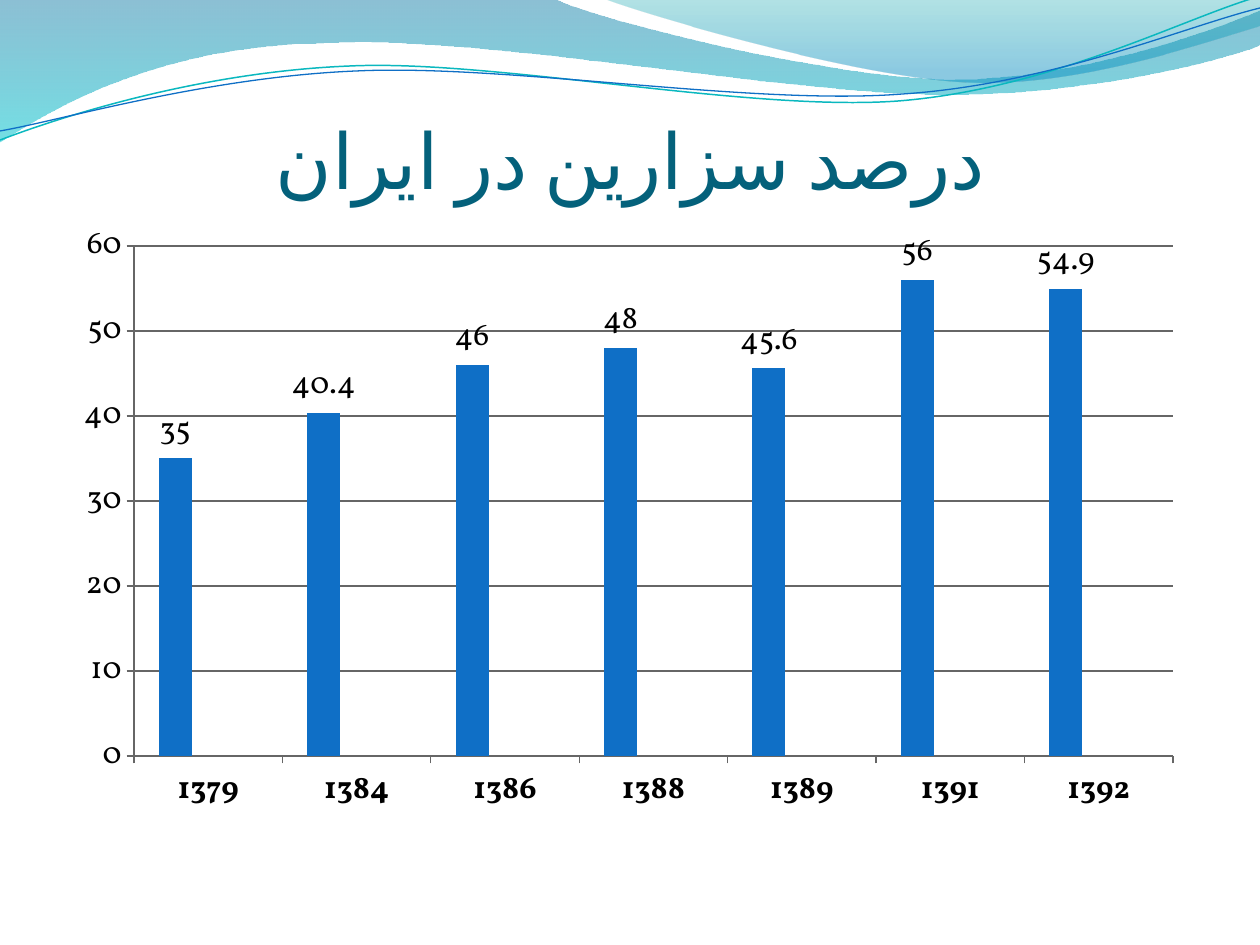
from dataclasses import dataclass

from lxml import etree
from pptx import Presentation
from pptx.chart.data import CategoryChartData
from pptx.dml.color import RGBColor
from pptx.enum.chart import XL_CHART_TYPE, XL_LABEL_POSITION, XL_TICK_MARK
from pptx.enum.text import MSO_ANCHOR, PP_ALIGN
from pptx.oxml import parse_xml
from pptx.oxml.ns import nsdecls, qn
from pptx.util import Emu, Pt

COLUMNS = XL_CHART_TYPE.COLUMN_CLUSTERED
OUTSIDE_END = XL_LABEL_POSITION.OUTSIDE_END
TICK_OUTSIDE = XL_TICK_MARK.OUTSIDE
BOTTOM = MSO_ANCHOR.BOTTOM
CENTER = PP_ALIGN.CENTER
PX = 914400 // 126


@dataclass(frozen=True)
class Theme:
    title: str = "04617B"
    ink: str = "000000"
    grid: str = "666666"
    blue: str = "0F6FC6"
    sky: str = "009DD9"
    cyan: str = "0BD0D9"
    teal_line: str = "0AB8BF"
    title_font: str = "Calibri"
    chart_font: str = "Vollkorn"
    title_size: int = 44
    chart_size: int = 18


THEME = Theme()
SLIDE_SIZE = (1260, 945)

TITLE = "درصد سزارین در ایران"
TITLE_BOX = (95, 84, 1071, 121)

CHART_BOX = (62, 212, 1134, 614)
PLOT_BOX = (134, 246, 1039, 510)
YEARS = ["1379", "1384", "1386", "1388", "1389", "1391", "1392"]
PERCENTAGES = [35, 40.4, 46, 48, 45.6, 56, 54.9]
SERIES = [
    ("Series 1", PERCENTAGES, THEME.blue),
    ("Series 2", [None] * len(YEARS), THEME.sky),
    ("Series 3", [None] * len(YEARS), THEME.cyan),
]

BANDS = [
    ((0, 0), [
        [(554, -1)],
        [(600, 21), (837, 79), (955, 79)],
        [(1075, 79), (1207, 33), (1260, 11)],
        [(1261, 45)],
        [(1239, 55), (1096, 96), (940, 94)],
        [(784, 94), (481, 35), (324, 43)],
        [(163, 45), (58, 105), (-1, 142)],
        [(0, 0)],
    ], [(0, "0074A1", 45), (1, "00C6CF", 55)]),
    ((604, -1), [
        [(641, 14), (859, 78), (969, 82)],
        [(1079, 87), (1211, 40), (1260, 26)],
        [(1260, 0)],
        [(604, -1)],
    ], [(0, "00A1A9", 30), (0.8, "008BBF", 45)]),
]
WAVES = [
    ((0, 140), [
        [(60, 117), (199, 72), (349, 66)],
        [(493, 59), (747, 112), (898, 101)],
        [(1050, 89), (1182, 19), (1257, -3)],
    ], THEME.teal_line, 0.85),
    ((0, 131), [
        [(59, 121), (207, 77), (357, 71)],
        [(508, 64), (752, 106), (903, 94)],
        [(1053, 84), (1186, 26), (1260, 8)],
    ], THEME.blue, 0.75),
]


def rgb(value):
    return RGBColor.from_string(value)


def emu(box):
    return [Emu(length * PX) for length in box]


def add_outline(slide, start, segments, close):
    builder = slide.shapes.build_freeform(*start, scale=PX)
    builder = slide.shapes.build_freeform(*emu(start))
    points = [emu(point) for segment in segments for point in segment]
    builder.add_line_segments(points, close=close)
    outline = builder.convert_to_shape()
    outline.shadow.inherit = False

    steps = iter(list(outline.element.iter(qn("a:lnTo"))))
    for segment in segments:
        first, *others = [next(steps) for _ in segment]
        if others:
            first.tag = qn("a:cubicBezTo")
            for other in others:
                first.append(other[0])
                other.getparent().remove(other)
    return outline


def add_band(slide, start, segments, stops):
    band = add_outline(slide, start, segments, True)
    band.line.fill.background()
    band.fill.gradient()
    band.fill.gradient_angle = 270
    for stop, (position, color, _) in zip(band.fill.gradient_stops, stops):
        stop.position = position
        stop.color.rgb = rgb(color)
    for color_node, (_, _, opacity) in zip(band.element.iter(qn("a:srgbClr")), stops):
        etree.SubElement(color_node, qn("a:alpha")).set("val", str(opacity * 1000))


def add_wave(slide, start, segments, color, width):
    wave = add_outline(slide, start, segments, False)
    wave.fill.background()
    wave.line.color.rgb = rgb(color)
    wave.line.width = Pt(width)


def add_text(slide, text, *, box, size, font, color, align, anchor, language, rtl):
    frame = slide.shapes.add_textbox(*emu(box)).text_frame
    frame.word_wrap = True
    frame.vertical_anchor = anchor
    frame.margin_left = frame.margin_right = frame.margin_bottom = 0
    frame.margin_top = Emu(6 * PX)
    paragraph = frame.paragraphs[0]
    paragraph.alignment = align
    paragraph._p.get_or_add_pPr().set("rtl", str(int(rtl)))
    run = paragraph.add_run()
    run.text = text
    run.font.size = Pt(size)
    run.font.name = font
    run.font.color.rgb = rgb(color)
    properties = run._r.get_or_add_rPr()
    properties.set("lang", language)
    etree.SubElement(properties, qn("a:cs")).set("typeface", font)


def place_plot(chart):
    left, top, width, height = CHART_BOX
    x, y, w, h = PLOT_BOX
    fractions = {"x": (x - left) / width, "y": (y - top) / height, "w": w / width, "h": h / height}
    settings = '<c:layoutTarget val="inner"/><c:xMode val="edge"/><c:yMode val="edge"/>'
    settings += "".join(f'<c:{key} val="{value:.4f}"/>' for key, value in fractions.items())
    layout = f'<c:layout {nsdecls("c")}><c:manualLayout>{settings}</c:manualLayout></c:layout>'
    plot_area = chart.element.find(".//" + qn("c:plotArea"))
    for automatic in plot_area.findall(qn("c:layout")):
        plot_area.remove(automatic)
    plot_area.insert(0, parse_xml(layout))


def add_percentage_chart(slide):
    data = CategoryChartData()
    data.categories = YEARS
    for name, values, _ in SERIES:
        data.add_series(name, values)
    chart = slide.shapes.add_chart(COLUMNS, *emu(CHART_BOX), data).chart
    chart.has_title = chart.has_legend = False
    chart.font.name = THEME.chart_font
    chart.font.size = Pt(THEME.chart_size)
    chart.font.color.rgb = rgb(THEME.ink)

    plot = chart.plots[0]
    plot.vary_by_categories = False
    plot.gap_width = 150
    plot.overlap = 0
    for series, (_, _, color) in zip(plot.series, SERIES):
        series.format.fill.solid()
        series.format.fill.fore_color.rgb = rgb(color)
    labels = plot.series[0].data_labels
    labels.show_value = True
    labels.position = OUTSIDE_END

    years, percent = chart.category_axis, chart.value_axis
    percent.minimum_scale, percent.maximum_scale, percent.major_unit = 0, 60, 10
    percent.has_major_gridlines = True
    years.tick_labels.font.bold = True
    for axis in (years, percent):
        axis.major_tick_mark = TICK_OUTSIDE
    for rule in (years, percent, percent.major_gridlines):
        rule.format.line.color.rgb = rgb(THEME.grid)
    place_plot(chart)


def main():
    deck = Presentation()
    deck.slide_width, deck.slide_height = emu(SLIDE_SIZE)
    slide = deck.slides.add_slide(deck.slide_layouts[6])
    for band in BANDS:
        add_band(slide, *band)
    for wave in WAVES:
        add_wave(slide, *wave)
    add_text(slide, TITLE, box=TITLE_BOX, size=THEME.title_size, font=THEME.title_font,
             color=THEME.title, align=CENTER, anchor=BOTTOM, language="fa-IR", rtl=True)
    add_percentage_chart(slide)
    deck.save("out.pptx")


if __name__ == "__main__":
    main()
